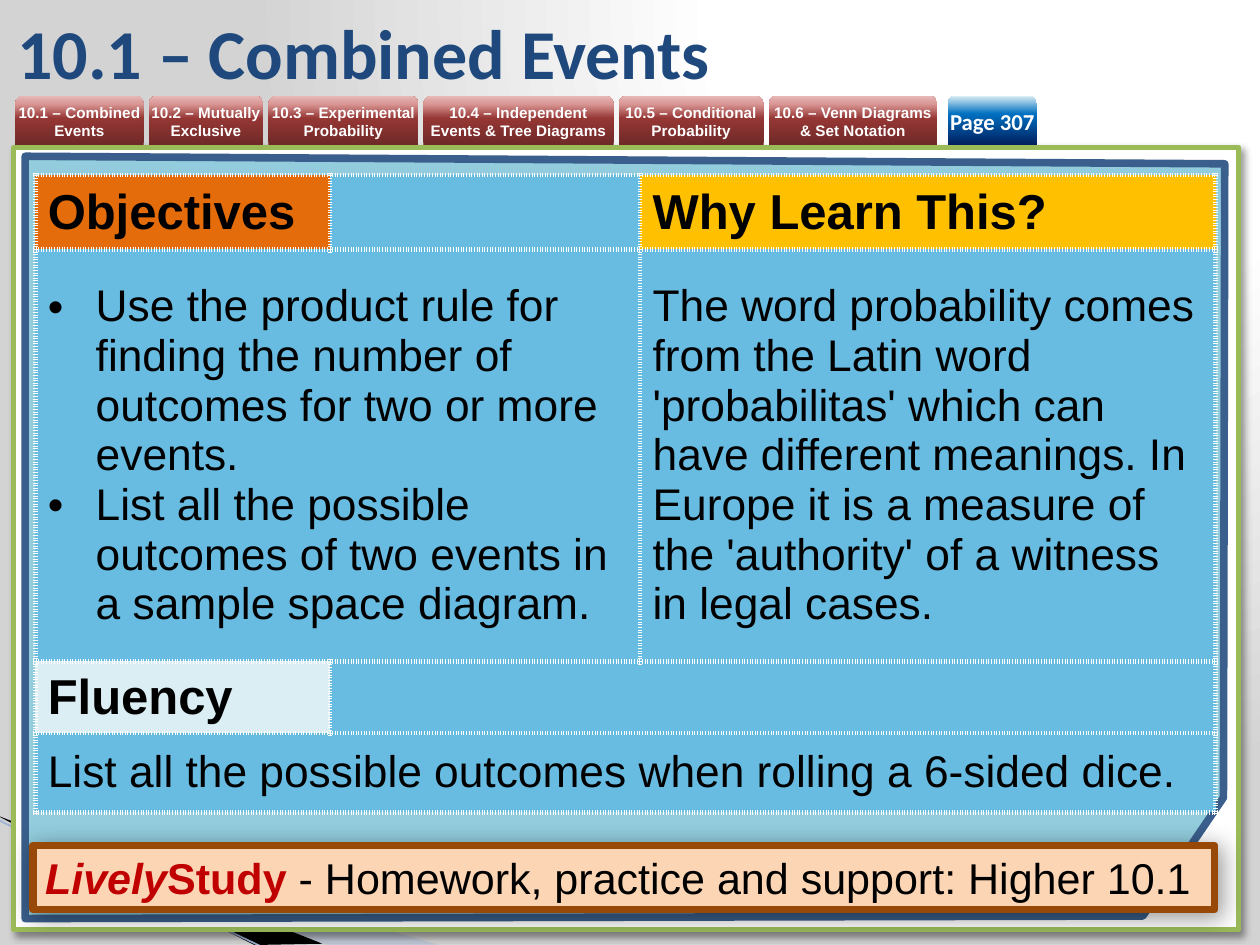
from lxml.etree import SubElement
from pptx import Presentation
from pptx.dml.color import RGBColor
from pptx.enum.shapes import MSO_CONNECTOR as Connector, MSO_SHAPE as Shape
from pptx.enum.text import MSO_ANCHOR as Anchor, PP_ALIGN as Align
from pptx.oxml import parse_xml
from pptx.oxml.ns import nsdecls, qn
from pptx.util import Inches, Pt

COLORS = {
    "white": "FFFFFF", "black": "000000", "silver": "D3D3D3", "title": "1F497D",
    "ribbon": "A7B9DB", "ribbon_edge": "9EB3D6", "green": "9BBB59",
    "board": "93CDDD", "board_edge": "3A5F8C", "cell": "68BCE1",
    "orange": "E46C0A", "gold": "FFC000", "ice": "DBEEF4",
    "peach": "FCD5B5", "brown": "984807", "red": "C00000",
}
RGB = {name: RGBColor.from_string(value) for name, value in COLORS.items()}
TAB_RED = [(0, "6F2927"), (54, "953735"), (83, "D99694"), (100, "E6B9B8")]
TAB_BLUE = [(0, "002060"), (63, "0070C0"), (100, "DBEEF4")]


def write(frame, text, size=25.3, font="Arial", color="black", bold=False, italic=False,
          align=Align.LEFT, spacing=None, bullet=False, new=False):
    paragraph = frame.add_paragraph() if new else frame.paragraphs[0]
    paragraph.alignment = align
    if spacing:
        paragraph.line_spacing = spacing
    if bullet:
        props = paragraph._p.get_or_add_pPr()
        props.set("marL", str(Inches(0.38)))
        props.set("indent", str(-Inches(0.38)))
        SubElement(props, qn("a:buFont"), typeface="Arial")
        SubElement(props, qn("a:buChar"), char="•")
    run = paragraph.add_run()
    run.text = text
    run.font.size = Pt(size)
    run.font.name = font
    run.font.color.rgb = RGB[color]
    run.font.bold = bold
    run.font.italic = italic


def set_gradient(parent, stops, direction):
    stop_xml = "".join(f'<a:gs pos="{pos * 1000}"><a:srgbClr val="{color}"/></a:gs>'
                       for pos, color in stops)
    gradient = parse_xml(f'<a:gradFill {nsdecls("a")} rotWithShape="1">'
                         f'<a:gsLst>{stop_xml}</a:gsLst>{direction}</a:gradFill>')
    parent.replace(parent.find(qn("a:solidFill")), gradient)


prs = Presentation()
prs.slide_width, prs.slide_height = Inches(10), Inches(7.5)
slide = prs.slides.add_slide(prs.slide_layouts[6])
shapes = slide.shapes

slide.background.fill.solid()
slide.background.fill.fore_color.rgb = RGB["white"]
set_gradient(slide.element.xpath(".//p:bgPr")[0],
             [(0, COLORS["white"]), (40, COLORS["white"]), (100, COLORS["silver"])],
             '<a:path path="circle"><a:fillToRect l="65000" b="98000"/></a:path>')

ribbons = [
    ("ribbon", 40, [(-0.01, 6.5), (3.49, 7.5), (2.59, 7.5), (-0.01, 6.49)]),
    ("black", 100, [(0, 6.48), (2.56, 7.49), (2.02, 7.5), (0.01, 6.49)]),
]
for color, opacity, points in ribbons:
    corners = [(Inches(x), Inches(y)) for x, y in points]
    outline = shapes.build_freeform(*corners[0])
    outline.add_line_segments(corners[1:])
    ribbon = outline.convert_to_shape()
    ribbon.shadow.inherit = False
    ribbon.line.fill.background()
    ribbon.fill.solid()
    ribbon.fill.fore_color.rgb = RGB[color]
    if opacity < 100:
        tint = ribbon.element.spPr.find(qn("a:solidFill"))[0]
        SubElement(tint, qn("a:alpha"), val=str(opacity * 1000))

ribbon_edge = shapes.add_connector(Connector.STRAIGHT, Inches(-0.01), Inches(6.51),
                                   Inches(2.09), Inches(7.52))
ribbon_edge.line.color.rgb = RGB["ribbon_edge"]
ribbon_edge.line.width = Pt(0.95)
SubElement(ribbon_edge.element.spPr, qn("a:effectLst"))

panel = shapes.add_shape(Shape.RECTANGLE, Inches(0.11), Inches(1.17), Inches(9.72), Inches(6.21))

board_corners = [(Inches(x), Inches(y)) for x, y in
                 [(0.2, 1.24), (9.72, 1.3), (9.71, 6.33), (9.07, 7.27), (0.2, 7.29)]]
board_outline = shapes.build_freeform(*board_corners[0])
board_outline.add_line_segments(board_corners[1:], close=True)
board = board_outline.convert_to_shape()

tabs = [
    (0.12, 1.02, "10.1 – Combined Events"),
    (1.18, 0.91, "10.2 – Mutually Exclusive"),
    (2.13, 1.19, "10.3 – Experimental Probability"),
    (3.36, 1.51, "10.4 – Independent Events & Tree Diagrams"),
    (4.91, 1.15, "10.5 – Conditional Probability"),
    (6.1, 1.34, "10.6 – Venn Diagrams & Set Notation"),
    (7.52, 0.71, "Page 307"),
]
for left, width, label in tabs:
    is_page = label.startswith("Page")
    tab = shapes.add_shape(Shape.ROUND_2_SAME_RECTANGLE, Inches(left), Inches(0.76),
                           Inches(width), Inches(0.39))
    tab.shadow.inherit = False
    tab.line.fill.background()
    tab.fill.solid()
    set_gradient(tab.element.spPr, TAB_BLUE if is_page else TAB_RED,
                 '<a:lin ang="16200000" scaled="0"/>')
    frame = tab.text_frame
    frame.margin_left = frame.margin_right = frame.margin_top = frame.margin_bottom = 0
    frame.word_wrap = True
    frame.vertical_anchor = Anchor.MIDDLE
    write(frame, label, size=13 if is_page else 8.7, font="Calibri" if is_page else "Arial",
          color="white", bold=True, align=Align.CENTER, spacing=None if is_page else Pt(10))

title = shapes.add_textbox(Inches(0.04), Inches(0.05), Inches(8.27), Inches(0.71)).text_frame
title.word_wrap = True
title.vertical_anchor = Anchor.MIDDLE
write(title, "10.1 – Combined Events", size=40, font="Calibri", color="title", bold=True)

lesson_frame = shapes.add_table(4, 3, Inches(0.28), Inches(1.39), Inches(9.37), Inches(4.98))
lesson = lesson_frame.table
lesson.first_row = lesson.horz_banding = False
for column, width in zip(lesson.columns, [2.34, 2.46, 4.57]):
    column.width = Inches(width)
for row, height in zip(lesson.rows, [0.59, 3.27, 0.49, 0.63]):
    row.height = Inches(height)
for cell in lesson.iter_cells():
    cell.vertical_anchor = Anchor.MIDDLE
    props = cell._tc.get_or_add_tcPr()
    for side in ("lnL", "lnR", "lnT", "lnB"):
        props.append(parse_xml(
            f'<a:{side} {nsdecls("a")} w="{Pt(3)}"><a:solidFill><a:srgbClr val="{COLORS["white"]}"/>'
            f'</a:solidFill><a:prstDash val="sysDot"/></a:{side}>'))
    cell.fill.solid()
    cell.fill.fore_color.rgb = RGB["cell"]
for first, last in [((1, 0), (1, 1)), ((2, 1), (2, 2)), ((3, 0), (3, 2))]:
    lesson.cell(*first).merge(lesson.cell(*last))

for row, column, heading, color in [(0, 0, "Objectives", "orange"),
                                    (0, 2, "Why Learn This?", "gold"),
                                    (2, 0, "Fluency", "ice")]:
    cell = lesson.cell(row, column)
    cell.fill.fore_color.rgb = RGB[color]
    write(cell.text_frame, heading, size=28, bold=True)

objectives = ["Use the product rule for finding the number of outcomes for two or more events.",
              "List all the possible outcomes of two events in a sample space diagram."]
for index, objective in enumerate(objectives):
    write(lesson.cell(1, 0).text_frame, objective, bullet=True, new=index > 0)
write(lesson.cell(1, 2).text_frame,
      "The word probability comes from the Latin word 'probabilitas' which can have different "
      "meanings. In Europe it is a measure of the 'authority' of a witness in legal cases.")
write(lesson.cell(3, 0).text_frame, "List all the possible outcomes when rolling a 6-sided dice.")

homework = shapes.add_shape(Shape.RECTANGLE, Inches(0.26), Inches(6.71), Inches(9.38), Inches(0.51))
homework.text_frame.word_wrap = True
homework.text_frame.vertical_anchor = Anchor.MIDDLE
for text, color, bold, italic in [("Lively", "red", True, True),
                                  ("Study ", "red", True, False),
                                  ("- Homework, practice and support: Higher 10.1", "black", False, False)]:
    write(homework.text_frame, text, size=24.6, color=color, bold=bold, italic=italic)

for box, fill, edge, width, blur in [(panel, "white", "green", 3, 4),
                                     (board, "board", "board_edge", 4.33, 0),
                                     (homework, "peach", "brown", 4.33, 13)]:
    box.fill.solid()
    box.fill.fore_color.rgb = RGB[fill]
    box.line.color.rgb = RGB[edge]
    box.line.width = Pt(width)
    box.shadow.inherit = False
    if blur:
        box.element.spPr.find(qn("a:effectLst")).append(parse_xml(
            f'<a:outerShdw {nsdecls("a")} blurRad="{Pt(blur)}" dist="{Pt(3)}" dir="2700000" '
            f'algn="tl" rotWithShape="0"><a:srgbClr val="{COLORS["black"]}">'
            f'<a:alpha val="40000"/></a:srgbClr></a:outerShdw>'))

prs.save("out.pptx")
